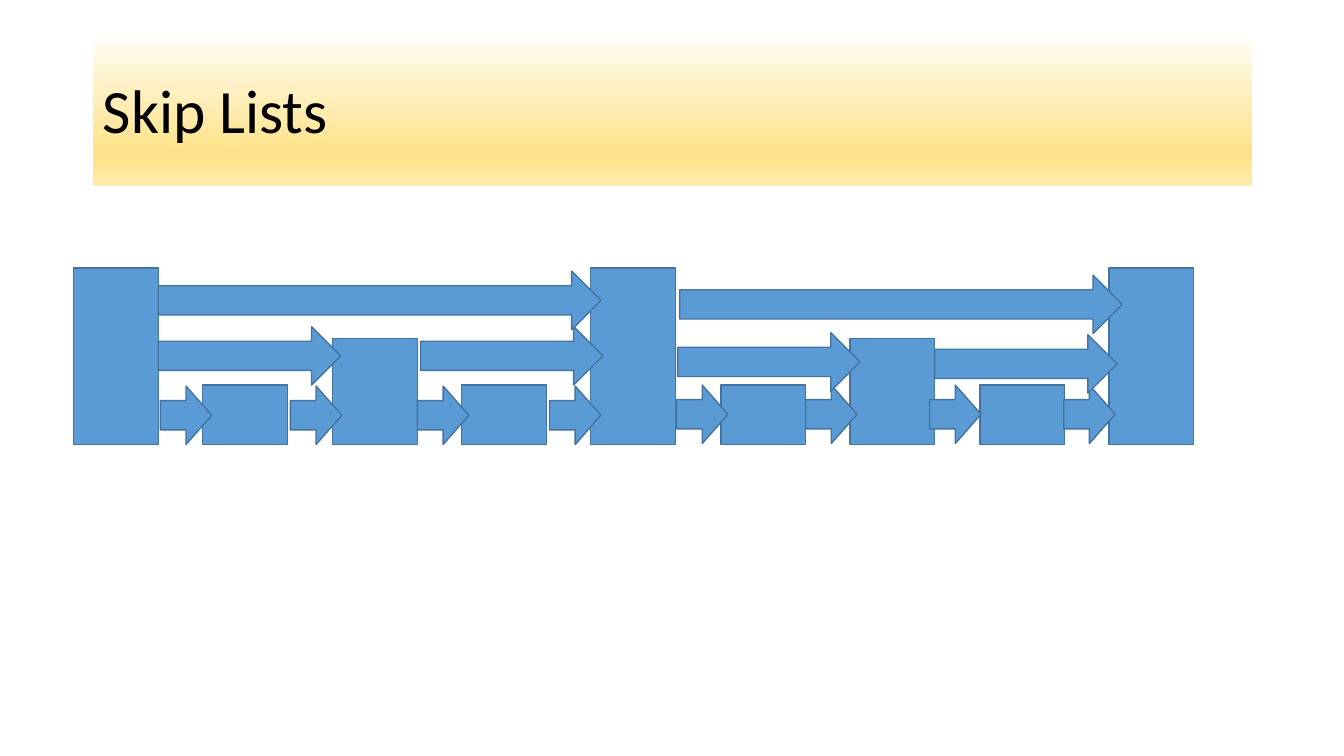
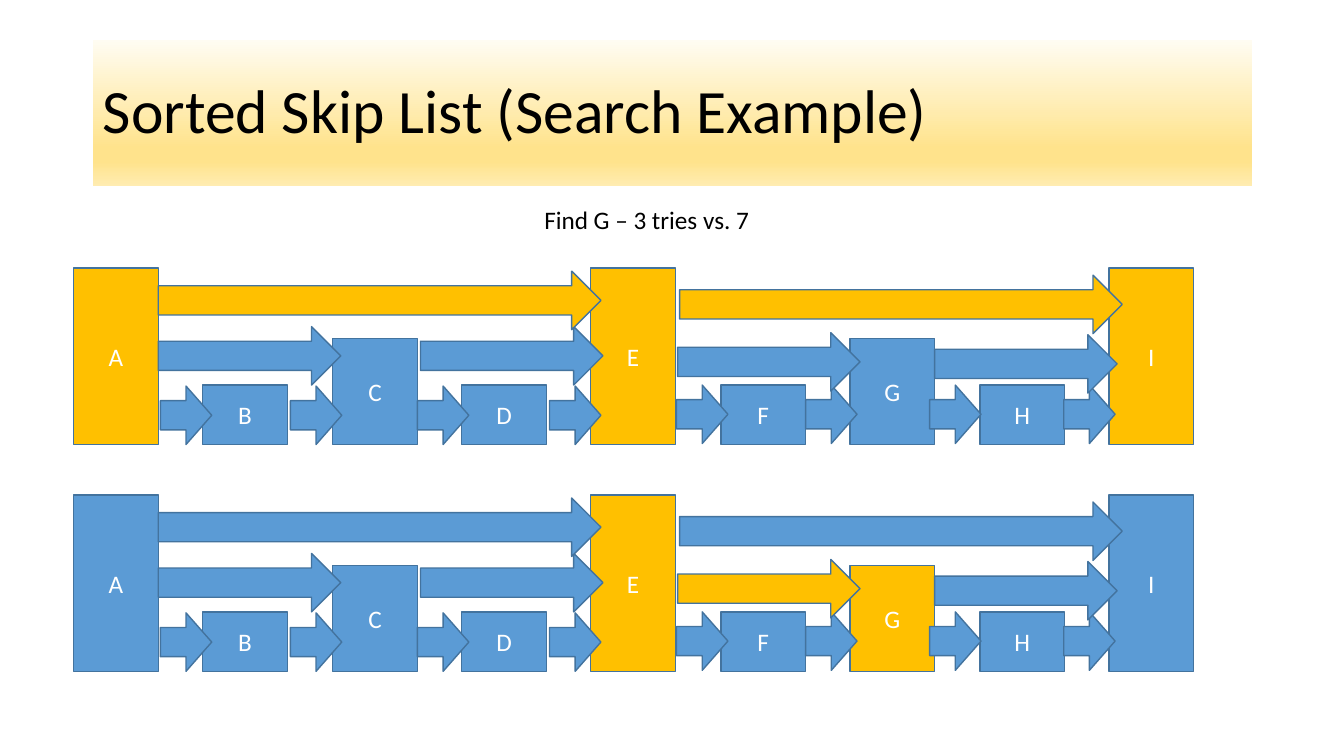
from dataclasses import dataclass

from lxml.etree import SubElement
from pptx import Presentation
from pptx.dml.color import RGBColor
from pptx.enum.shapes import MSO_SHAPE as Preset
from pptx.enum.text import MSO_ANCHOR as Anchor, MSO_AUTO_SIZE as AutoSize, PP_ALIGN as Align
from pptx.oxml.ns import qn
from pptx.presentation import Presentation as Deck
from pptx.shapes.autoshape import Shape
from pptx.slide import Slide
from pptx.text.text import _Paragraph as Paragraph
from pptx.util import Pt

EMU_PER_PX = 9144
FONT = "Calibri"
COLORS = {
    "node": "5B9BD5",
    "outline": "43739E",
    "visited": "FFC000",
    "label": "FFFFFF",
    "text": "000000",
}
TITLE_STOPS = {0: "FFFCF2", 74: "FFE38C", 83: "FFE38C", 100: "FFECB2"}

LETTERS = "ABCDEFGHI"
FIRST_LEFT, LAST_LEFT = 73, 1100
NODE_WIDTH = 84
NODE_BOTTOM = 441
LEVEL_HEIGHTS = (59, 105, 175)
ARROW_HEIGHT = 58
ARROW_WIDTHS = {1: 51, 2: 181, 4: 439}
SECOND_LIST_OFFSET = 225


@dataclass(frozen=True)
class Link:
    ends: str
    left: int
    top: int

    @property
    def width(self) -> int:
        start, end = map(LETTERS.index, self.ends)
        return ARROW_WIDTHS[end - start]


@dataclass(frozen=True)
class SkipList:
    offset: int = 0
    labelled: bool = True
    visited: tuple[str, ...] = ()


LINKS = (
    Link("AB", 159, 383),
    Link("BC", 288, 383),
    Link("CD", 414, 383),
    Link("DE", 545, 383),
    Link("EF", 671, 382),
    Link("FG", 799, 382),
    Link("GH", 922, 382),
    Link("HI", 1055, 382),
    Link("AC", 157, 324),
    Link("CE", 417, 324),
    Link("EG", 672, 330),
    Link("GI", 927, 332),
    Link("AE", 157, 269),
    Link("EI", 674, 273),
)


def px(length: int) -> int:
    return length * EMU_PER_PX


def rgb(name: str) -> RGBColor:
    return RGBColor.from_string(COLORS[name])


def style_text(paragraph: Paragraph, size: int, color: str) -> None:
    paragraph.font.name = FONT
    paragraph.font.size = Pt(size)
    paragraph.font.color.rgb = rgb(color)


def fill_title_band(band: Shape) -> None:
    band.fill.gradient()
    band.fill.gradient_angle = 270
    stops = band._element.spPr.find(f".//{qn('a:gsLst')}")
    stops.clear()
    for percent, color in TITLE_STOPS.items():
        stop = SubElement(stops, qn("a:gs"), pos=str(percent * 1000))
        SubElement(stop, qn("a:srgbClr"), val=color)


def add_titled_slide(deck: Deck, heading: str) -> Slide:
    slide = deck.slides.add_slide(deck.slide_layouts[5])
    title = slide.shapes.title
    title.left, title.top, title.width, title.height = map(px, (92, 40, 1150, 145))
    fill_title_band(title)
    title.text_frame.text = heading
    title.text_frame.vertical_anchor = Anchor.MIDDLE
    paragraph = title.text_frame.paragraphs[0]
    paragraph.alignment = Align.LEFT
    paragraph.line_spacing = 0.9
    style_text(paragraph, 44, "text")
    return slide


def add_block(slide: Slide, preset: Preset, left: int, top: int,
              width: int, height: int, visited: bool) -> Shape:
    block = slide.shapes.add_shape(preset, *map(px, (left, top, width, height)))
    block.shadow.inherit = False
    block.fill.solid()
    block.fill.fore_color.rgb = rgb("visited" if visited else "node")
    block.line.color.rgb = rgb("outline")
    block.line.width = Pt(1)
    return block


def node_level(index: int) -> int:
    return 2 if index % 4 == 0 else 1 if index % 2 == 0 else 0


def draw_skip_list(slide: Slide, skip_list: SkipList) -> None:
    pitch = (LAST_LEFT - FIRST_LEFT) / (len(LETTERS) - 1)
    for index, letter in enumerate(LETTERS):
        height = LEVEL_HEIGHTS[node_level(index)]
        node = add_block(
            slide, Preset.RECTANGLE, round(FIRST_LEFT + index * pitch),
            NODE_BOTTOM - height + skip_list.offset, NODE_WIDTH, height,
            letter in skip_list.visited,
        )
        if skip_list.labelled:
            node.text_frame.text = letter
            node.text_frame.vertical_anchor = Anchor.MIDDLE
            label = node.text_frame.paragraphs[0]
            label.alignment = Align.CENTER
            style_text(label, 18, "label")
    for link in LINKS:
        add_block(
            slide, Preset.RIGHT_ARROW, link.left, link.top + skip_list.offset,
            link.width, ARROW_HEIGHT, link.ends in skip_list.visited,
        )


def add_caption(slide: Slide, text: str) -> None:
    caption = slide.shapes.add_textbox(*map(px, (530, 198, 226, 40))).text_frame
    caption.word_wrap = False
    caption.auto_size = AutoSize.SHAPE_TO_FIT_TEXT
    caption.text = text
    style_text(caption.paragraphs[0], 18, "text")


def main() -> None:
    deck = Presentation()
    deck.slide_width, deck.slide_height = px(1333), px(750)

    overview = add_titled_slide(deck, "Skip Lists")
    draw_skip_list(overview, SkipList(labelled=False))

    search = add_titled_slide(deck, "Sorted Skip List (Search Example)")
    draw_skip_list(search, SkipList(visited=("A", "E", "I", "AE", "EI")))
    draw_skip_list(search, SkipList(SECOND_LIST_OFFSET, visited=("E", "G", "EG")))
    add_caption(search, "Find G – 3 tries vs. 7")

    deck.save("out.pptx")


if __name__ == "__main__":
    main()
